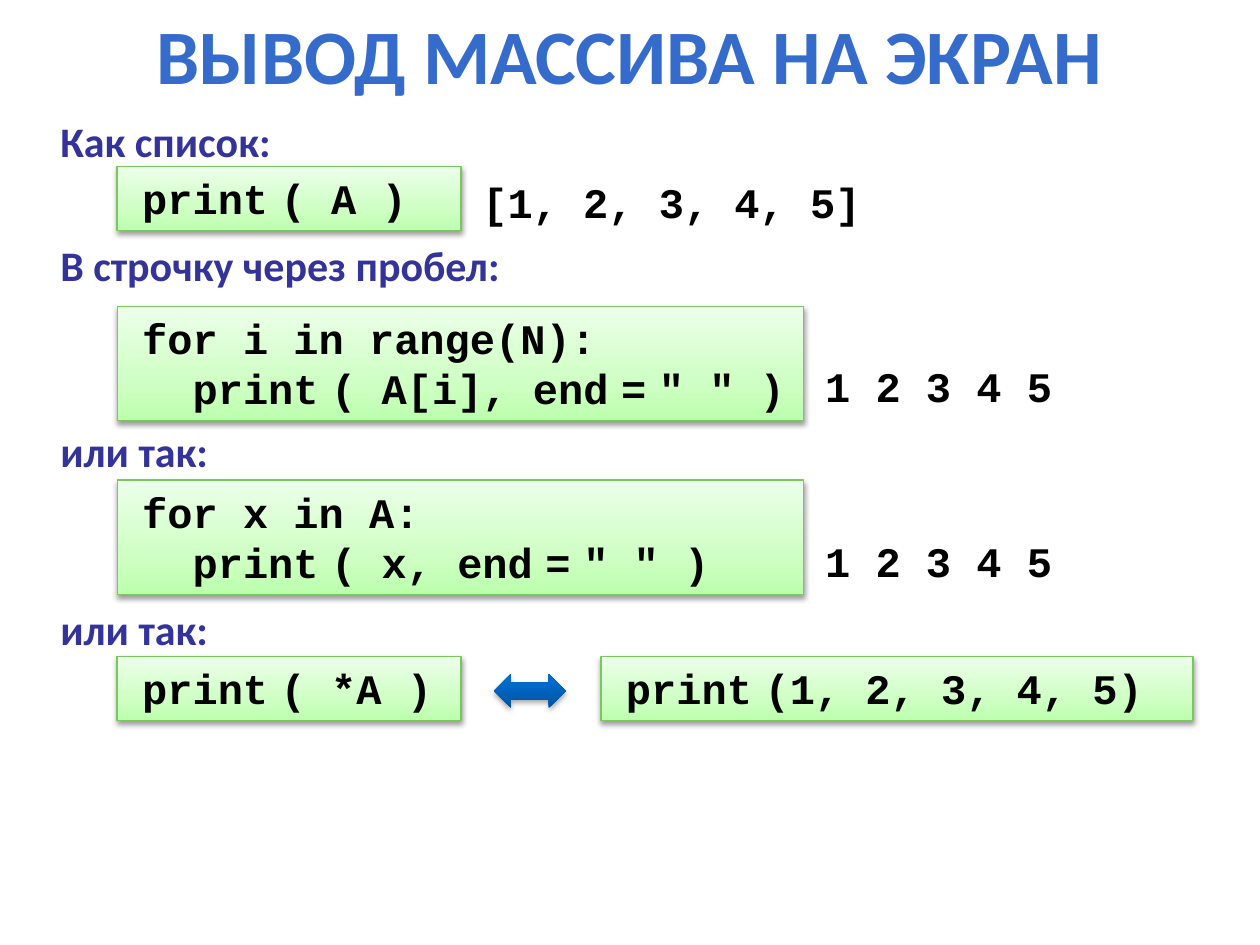
import pptx
import pptx.util
import pptx.dml.color
import pptx.enum.shapes
import pptx.enum.text
import pptx.oxml
import pptx.oxml.ns

Inches, Pt = pptx.util.Inches, pptx.util.Pt
ALIGN = pptx.enum.text.PP_ALIGN
SHAPE = pptx.enum.shapes.MSO_SHAPE
color = pptx.dml.color.RGBColor.from_string
NS = pptx.oxml.ns.nsdecls("a")

deck = pptx.Presentation()
deck.slide_width, deck.slide_height = Inches(10), Inches(7.5)
slide = deck.slides.add_slide(deck.slide_layouts[6])

# Columns and row heights of the slide, in inches
LABEL_LEFT, CODE_LEFT = 0.38, 0.93
SHORT, LONG = 2.73, 5.45
OUTPUT_GAP = 0.07
LINE, PADDING = 0.4, 0.11


def write(frame, lines, font, ink, size=24, align=ALIGN.LEFT, left=0, hanging=0):
    """Fill a frame with bold lines; a tilde stands for a half-size space."""
    frame.word_wrap = True
    frame.vertical_anchor = pptx.enum.text.MSO_ANCHOR.TOP
    for number, line in enumerate(lines):
        paragraph = frame.paragraphs[0] if number == 0 else frame.add_paragraph()
        paragraph.alignment = align
        properties = paragraph._p.get_or_add_pPr()
        properties.set("marL", str(Inches(left)))
        properties.set("indent", str(-Inches(hanging)))
        for part in line.replace("~", "|~|").split("|"):
            run = paragraph.add_run()
            run.text = part.replace("~", " ")
            run.font.name, run.font.bold = font, True
            run.font.size = Pt(size / 2 if part == "~" else size)
            run.font.color.rgb = color(ink)


def paint(shape, stops, opacity, distance):
    """Give a shape an upward gradient and a soft shadow below it."""
    shape.fill.gradient()
    shape.fill.gradient_angle = 90
    stop_list = shape._element.spPr.find(".//" + pptx.oxml.ns.qn("a:gsLst"))
    for old in list(stop_list):
        stop_list.remove(old)
    for position, tone in stops:
        stop_list.append(pptx.oxml.parse_xml(
            f'<a:gs {NS} pos="{position * 1000}"><a:srgbClr val="{tone}"/></a:gs>'))
    shape.shadow.inherit = False
    effects = shape._element.spPr.find(pptx.oxml.ns.qn("a:effectLst"))
    effects.append(pptx.oxml.parse_xml(
        f'<a:outerShdw {NS} blurRad="{Pt(3.1)}" dist="{Pt(distance)}" dir="5400000" '
        f'rotWithShape="0"><a:srgbClr val="000000"><a:alpha val="{opacity * 1000}"/>'
        '</a:srgbClr></a:outerShdw>'))


# Title
title = slide.shapes.add_textbox(0, 0, deck.slide_width, Inches(0.85)).text_frame
write(title, ["ВЫВОД МАССИВА НА ЭКРАН"], "Calibri", "356BCA", 44, ALIGN.CENTER)
title.vertical_anchor = pptx.enum.text.MSO_ANCHOR.MIDDLE

# Section labels
for top, label in [(0.87, "Как список:"), (1.85, "В строчку через пробел:"),
                   (3.33, "или так:"), (4.74, "или так:")]:
    box = slide.shapes.add_textbox(Inches(LABEL_LEFT), Inches(top), Inches(5.02), Inches(0.51))
    write(box.text_frame, [label], "Calibri", "333399", left=0.19, hanging=0.19)

# Code blocks: left, top, width, lines
code_blocks = [
    (CODE_LEFT, 1.32, SHORT, ["print~( A )"]),
    (CODE_LEFT, 2.43, LONG, ["for i in range(N):", '  print~( A[i], end~=~" " )']),
    (CODE_LEFT, 3.81, LONG, ["for x in A:", '  print~( x, end~=~" " )']),
    (CODE_LEFT, 5.21, SHORT, ["print~( *A )"]),
    (4.77, 5.21, 4.7, ["print~(1, 2, 3, 4, 5)"]),
]
for left, top, width, lines in code_blocks:
    block = slide.shapes.add_shape(SHAPE.RECTANGLE, Inches(left), Inches(top), Inches(width),
                                   Inches(LINE * len(lines) + PADDING))
    paint(block, [(0, "BCFFAD"), (35, "CFFFC5"), (100, "ECFFE9")], 38, 1.6)
    block.line.color.rgb = color("78C85D")
    block.line.width = Pt(0.75)
    write(block.text_frame, lines, "Courier New", "000000",
          align=ALIGN.JUSTIFY, left=0.2, hanging=0.1)

# Printed results to the right of the code
for code_width, top, width, result in [(SHORT, 1.35, 3.35, "[1, 2, 3, 4, 5]"),
                                       (LONG, 2.81, 2.21, "1 2 3 4 5"),
                                       (LONG, 4.2, 2.21, "1 2 3 4 5")]:
    box = slide.shapes.add_textbox(Inches(CODE_LEFT + code_width + OUTPUT_GAP), Inches(top),
                                   Inches(width), Inches(0.51))
    write(box.text_frame, [result], "Courier New", "000000", left=0.19, hanging=0.19)

# Equivalence arrow
equivalence = slide.shapes.add_shape(SHAPE.LEFT_RIGHT_ARROW, Inches(3.92), Inches(5.35),
                                     Inches(0.57), Inches(0.27))
paint(equivalence, [(0, "00539F"), (80, "006CCE"), (100, "006DCF")], 35, 1.8)
equivalence.line.fill.background()

deck.save("out.pptx")
